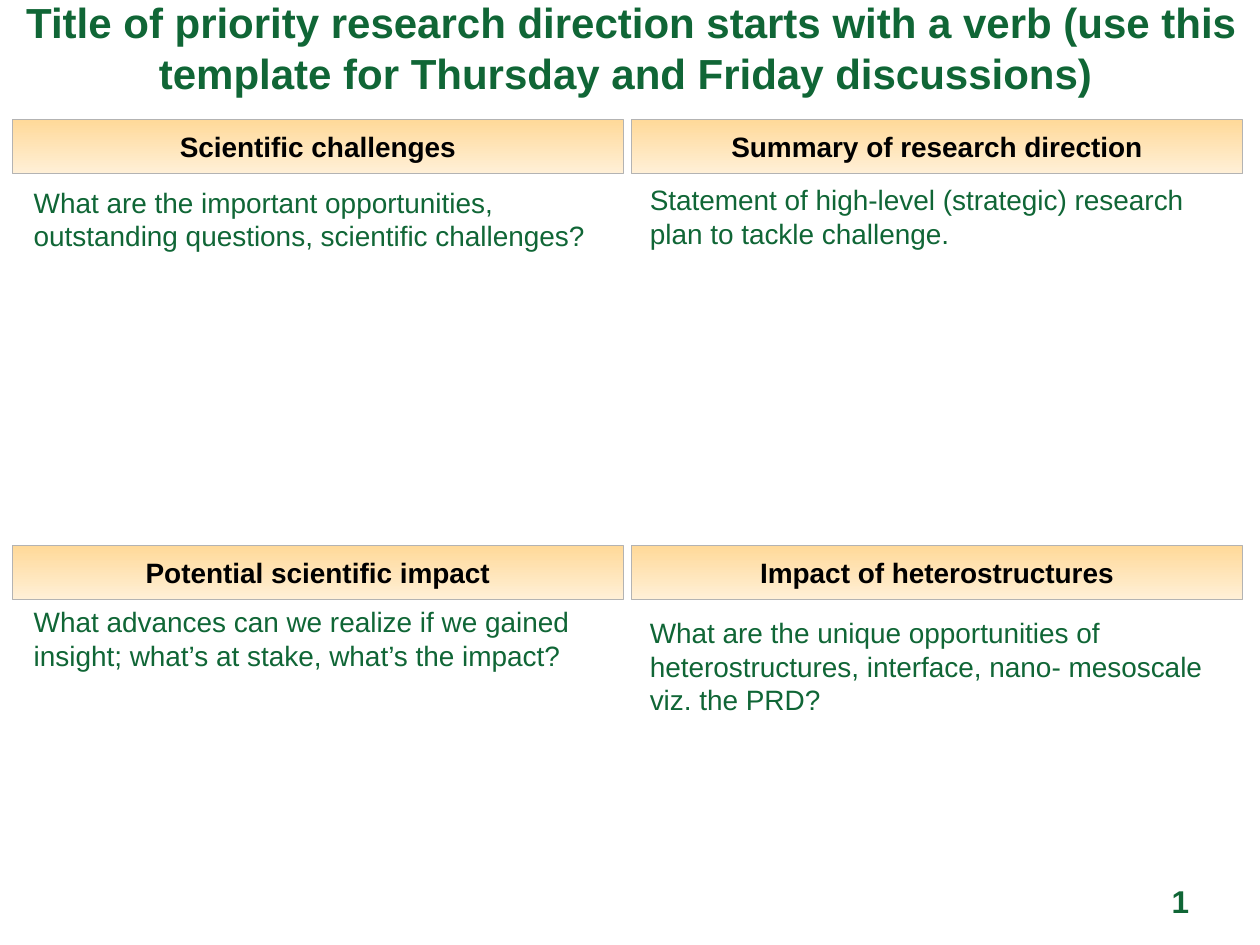
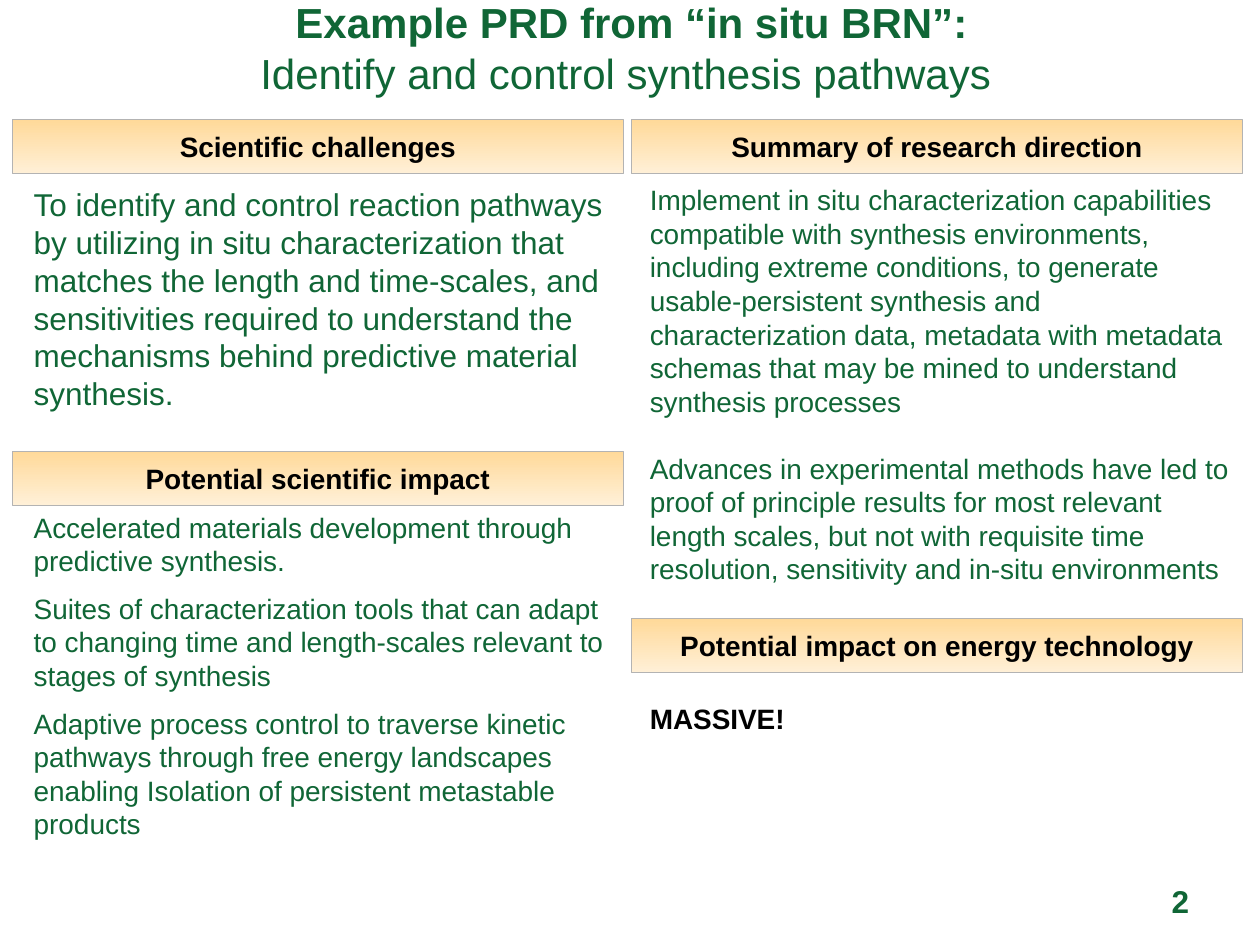
from pptx import Presentation
from pptx.dml.color import RGBColor
from pptx.enum.shapes import MSO_SHAPE
from pptx.enum.text import MSO_ANCHOR, MSO_AUTO_SIZE as FIT, PP_ALIGN
from pptx.util import Cm, Pt

GREEN, BLACK, GREY = "106636", "000000", "B3B3B3"
BAND_TOP, BAND_BOTTOM = "FFD999", "FFF0D7"
LEFT, RIGHT = 0, 1
BAND_X, BAND_W, BAND_H = (0.25, 12.73), 12.32, 1.09
BODY_X, BODY_W = (0.43, 12.85), (12.14, 12.19)
TOP_ROW = 2.41


def rgb(value):
    return RGBColor.from_string(value)


class Deck:
    def __init__(self):
        self.prs = Presentation()
        self.prs.slide_width, self.prs.slide_height = Cm(25.4), Cm(19.05)
        self.s = None

    def font(self, target, size, color=GREEN, bold=False):
        f = target.font
        f.name, f.size, f.bold = "Arial", Pt(size), bold
        f.color.rgb = rgb(color)

    def slide(self, title, subtitle=None):
        self.s = self.prs.slides.add_slide(self.prs.slide_layouts[5])
        sp = self.s.shapes.title
        sp.left, sp.top, sp.width, sp.height = Cm(0.03), Cm(-0.25), Cm(25.4), Cm(2.41)
        tf = sp.text_frame
        tf.auto_size, tf.word_wrap = FIT.NONE, True
        tf.vertical_anchor = MSO_ANCHOR.MIDDLE
        p = tf.paragraphs[0]
        p.alignment = PP_ALIGN.CENTER
        r = p.add_run()
        r.text = title
        self.font(r, 24, bold=True)
        if subtitle:
            p.add_line_break()
            r = p.add_run()
            r.text = subtitle
            self.font(r, 24)
        self.text(23.37, 17.65, 1.07, 1.02, [str(len(self.prs.slides))], 18, bold=True)

    def band(self, col, y, heading):
        sp = self.s.shapes.add_shape(
            MSO_SHAPE.RECTANGLE, Cm(BAND_X[col]), Cm(y), Cm(BAND_W), Cm(BAND_H))
        sp.shadow.inherit = False
        sp.fill.gradient()
        sp.fill.gradient_angle = 270
        for stop, color in zip(sp.fill.gradient_stops, (BAND_TOP, BAND_BOTTOM)):
            stop.color.rgb = rgb(color)
        sp.line.color.rgb = rgb(GREY)
        sp.line.width = Pt(0.25)
        tf = sp.text_frame
        tf.word_wrap, tf.vertical_anchor = False, MSO_ANCHOR.MIDDLE
        p = tf.paragraphs[0]
        p.text, p.alignment = heading, PP_ALIGN.CENTER
        self.font(p, 16, BLACK, True)

    def text(self, x, y, w, h, lines, size=16, color=GREEN, bold=False, gap=0):
        tf = self.s.shapes.add_textbox(Cm(x), Cm(y), Cm(w), Cm(h)).text_frame
        tf.word_wrap, tf.auto_size = True, FIT.SHAPE_TO_FIT_TEXT
        for i, line in enumerate(lines):
            p = tf.add_paragraph() if i else tf.paragraphs[0]
            p.text = line
            p.space_before = Pt(gap if i else 0)
            self.font(p, size, color, bold)

    def panel(self, col, y, heading, text_y, h, lines, **style):
        self.band(col, y, heading)
        self.text(BODY_X[col], text_y, BODY_W[col], h, lines, **style)


def main():
    deck = Deck()

    deck.slide("Title of priority research direction starts with a verb "
               "(use this template for Thursday and Friday discussions) ")
    deck.panel(LEFT, TOP_ROW, "Scientific challenges", 3.61, 1.63, [
        "What are the important opportunities, outstanding questions, "
        "scientific challenges?"])
    deck.panel(RIGHT, TOP_ROW, "Summary of research direction", 3.56, 1.63, [
        "Statement of high-level (strategic) research plan to tackle challenge."])
    deck.panel(LEFT, 11, "Potential scientific impact", 12.07, 1.63, [
        "What advances can we realize if we gained insight; what’s at stake, "
        "what’s the impact?"])
    deck.panel(RIGHT, 11, "Impact of heterostructures", 12.29, 3, [
        "What are the unique opportunities of heterostructures, interface, "
        "nano- mesoscale viz. the PRD?"])

    deck.slide("Example PRD from “in situ BRN”:",
               "Identify and control synthesis pathways ")
    deck.panel(LEFT, TOP_ROW, "Scientific challenges", 3.61, 4.88, [
        "To identify and control reaction pathways by utilizing in situ "
        "characterization that matches the length and time-scales, and "
        "sensitivities required to understand the mechanisms behind "
        "predictive material synthesis."], size=18)
    deck.panel(RIGHT, TOP_ROW, "Summary of research direction", 3.56, 9.83, [
        "Implement in situ characterization capabilities compatible with "
        "synthesis environments, including extreme conditions, to generate "
        "usable-persistent synthesis and characterization data, metadata with "
        "metadata schemas that may be mined to understand synthesis processes",
        "Advances in experimental methods have led to proof of principle "
        "results for most relevant length scales, but not with requisite time "
        "resolution, sensitivity and in-situ environments"], gap=19)
    deck.panel(LEFT, 9.09, "Potential scientific impact", 10.16, 7.09, [
        "Accelerated materials development through predictive synthesis.",
        "Suites of characterization tools that can adapt to changing time and "
        "length-scales relevant to stages of synthesis",
        "Adaptive process control to traverse kinetic pathways through free "
        "energy landscapes enabling Isolation of persistent metastable "
        "products"], gap=8)
    deck.panel(RIGHT, 12.47, "Potential impact on energy technology", 14.02, 1.63,
               ["MASSIVE!"], color=BLACK, bold=True)

    deck.prs.save("out.pptx")


if __name__ == "__main__":
    main()
